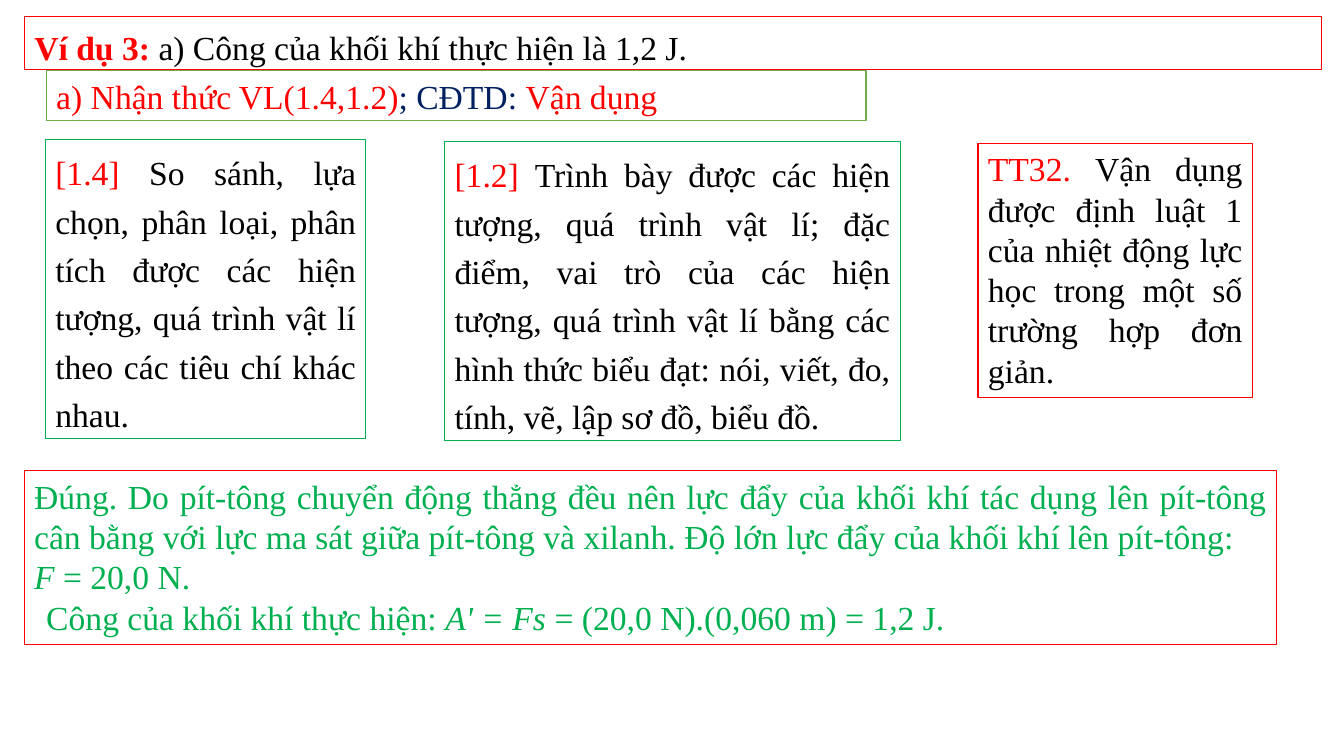
import pptx
import pptx.dml.color
import pptx.enum.text
import pptx.util

COLORS = {
    "red": "FF0000",
    "black": "000000",
    "navy": "002060",
    "green": "00B050",
    "olive": "70AD47",
}
FONT = {"name": "Times New Roman", "size": pptx.util.Pt(24)}
JUSTIFY = {"alignment": pptx.enum.text.PP_ALIGN.JUSTIFY}
HEADING = {**JUSTIFY, "line_spacing": 1.15, "space_before": pptx.util.Pt(6)}
COMPETENCE = {**JUSTIFY, "line_spacing": 1.2, "space_after": pptx.util.Pt(8)}
PLAIN = {"bold": False, "italic": False}
BOLD = {**PLAIN, "bold": True}
ITALIC = {**PLAIN, "italic": True}

TITLE = ((0.24, 0.16, 12.87, 0.53), "red", HEADING, [
    [("Ví dụ 3: ", "red", BOLD),
     ("a) Công của khối khí thực hiện là 1,2 J.", "black", PLAIN)],
])
BOXES = [
    ((0.46, 0.7, 8.13, 0.5), "olive", {}, [
        [("a) Nhận thức VL(1.4,1.2)", "red", PLAIN),
         ("; CĐTD: ", "navy", PLAIN),
         ("Vận dụng", "red", PLAIN)],
    ]),
    ((4.41, 1.4, 4.52, 2.97), "green", COMPETENCE, [
        [("[1.2] ", "red", PLAIN),
         ("Trình bày được các hiện tượng, quá trình vật lí; đặc điểm, vai trò "
          "của các hiện tượng, quá trình vật lí bằng các hình thức biểu đạt: "
          "nói, viết, đo, tính, vẽ, lập sơ đồ, biểu đồ.", "black", PLAIN)],
    ]),
    ((0.45, 1.38, 3.18, 2.97), "green", COMPETENCE, [
        [("[1.4] ", "red", PLAIN),
         ("So sánh, lựa chọn, phân loại, phân tích được các hiện tượng, "
          "quá trình vật lí theo các tiêu chí khác nhau.", "black", PLAIN)],
    ]),
    ((0.24, 4.67, 12.42, 1.72), "red", JUSTIFY, [
        [("Đúng. Do pít-tông chuyển động thẳng đều nên lực đẩy của khối khí "
          "tác dụng lên pít-tông cân bằng với lực ma sát giữa pít-tông và "
          "xilanh. Độ lớn lực đẩy của khối khí lên pít-tông: ", "green", PLAIN)],
        [("F", "green", ITALIC), (" = 20,0 N.", "green", PLAIN)],
        [("Công của khối khí thực hiện: ", "green", PLAIN),
         ("A' = Fs ", "green", ITALIC),
         ("= (20,0 N).(0,060 m) = 1,2 J.", "green", PLAIN)],
    ]),
    ((9.7, 1.42, 2.72, 2.52), "red", JUSTIFY, [
        [("TT32. ", "red", PLAIN),
         ("Vận dụng được định luật 1 của nhiệt động lực học trong một số "
          "trường hợp đơn giản.", "black", PLAIN)],
    ]),
]
FRAME = {
    "word_wrap": True,
    "auto_size": pptx.enum.text.MSO_AUTO_SIZE.NONE,
    "vertical_anchor": pptx.enum.text.MSO_ANCHOR.TOP,
}


def apply(target, values):
    for name, value in values.items():
        setattr(target, name, value)


def color(name):
    return pptx.dml.color.RGBColor.from_string(COLORS[name])


def fill_box(box, place, line_color, layout, paragraphs):
    sides = map(pptx.util.Inches, place)
    apply(box, dict(zip(("left", "top", "width", "height"), sides)))
    box.line.color.rgb = color(line_color)
    box.line.width = pptx.util.Pt(0.75)
    frame = box.text_frame
    apply(frame, FRAME)
    for index, spans in enumerate(paragraphs):
        para = frame.add_paragraph() if index else frame.paragraphs[0]
        apply(para, layout)
        for text, ink, style in spans:
            span = para.add_run()
            span.text = text
            apply(span.font, {**FONT, **style})
            span.font.color.rgb = color(ink)


deck = pptx.Presentation()
deck.slide_width = pptx.util.Inches(13.33)
deck.slide_height = pptx.util.Inches(7.5)
page = deck.slides.add_slide(deck.slide_layouts.get_by_name("Title Only"))

fill_box(page.shapes.title, *TITLE)
for place, line_color, layout, paragraphs in BOXES:
    box = page.shapes.add_textbox(0, 0, 0, 0)
    fill_box(box, place, line_color, layout, paragraphs)
    if len(paragraphs) > 1:
        work = box.text_frame.paragraphs[-1]
        indent = pptx.util.Inches(0.12)
        work._p.get_or_add_pPr().set("indent", str(indent))

deck.save("out.pptx")
